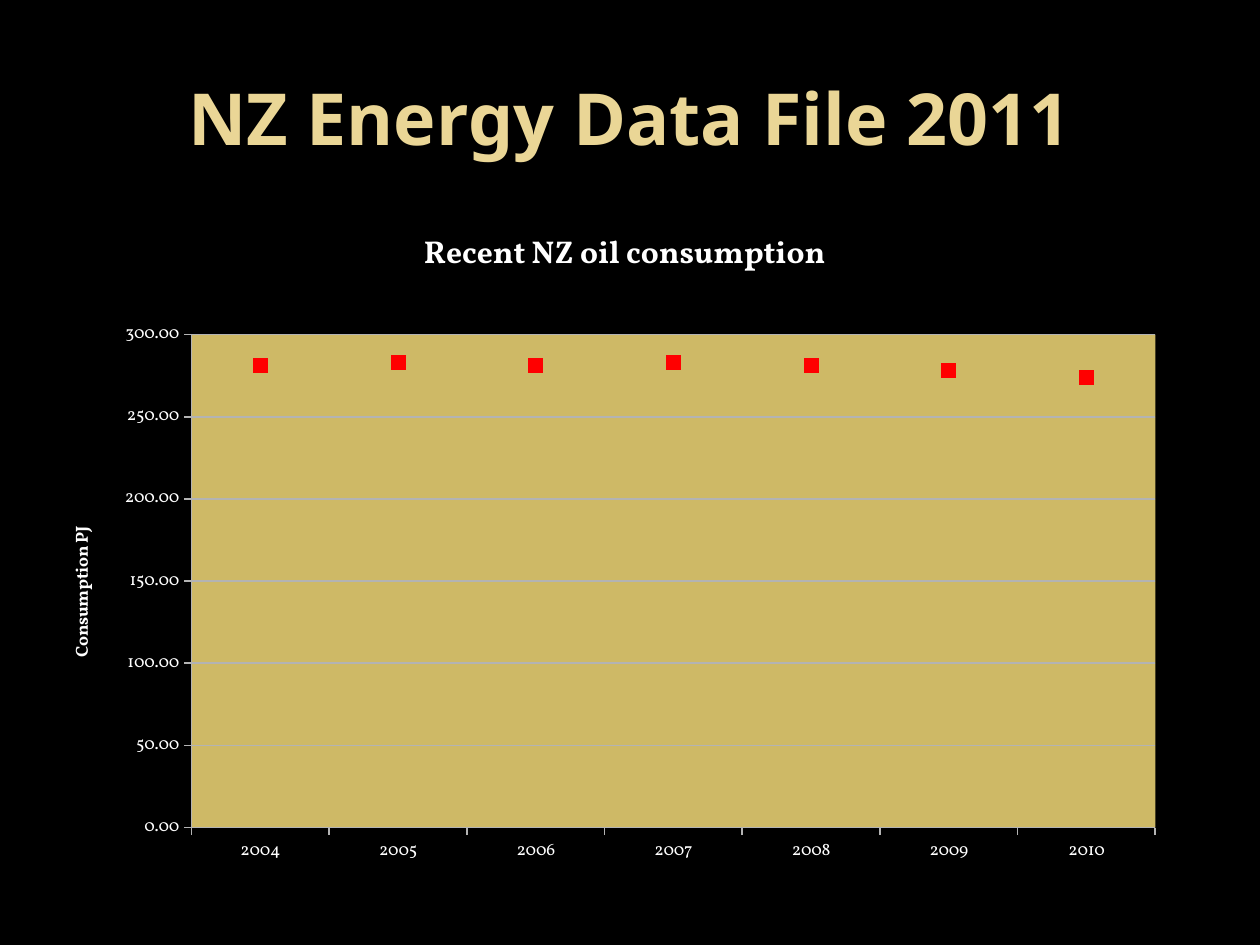
"""Build a slide with a marker chart of recent New Zealand oil consumption."""
from lxml import etree
from pptx import Presentation
from pptx import util as u
from pptx.chart.data import CategoryChartData
from pptx.dml.color import RGBColor
from pptx.enum import chart as charts, text
from pptx.oxml import parse_xml
from pptx.oxml.ns import nsdecls, qn


def paint(fill, color):
    fill.solid()
    fill.fore_color.rgb = RGBColor.from_string(color)


def place(element, before, x, y, width=None, height=None):
    for old in element.findall(qn("c:layout")):
        element.remove(old)
    layout = parse_xml(f"<c:layout {nsdecls('c')}><c:manualLayout/></c:layout>")
    settings = [("xMode", "edge"), ("yMode", "edge"), ("x", x), ("y", y)]
    if width:
        settings = [("layoutTarget", "inner"), *settings, ("w", width), ("h", height)]
    for name, value in settings:
        etree.SubElement(layout[0], qn(f"c:{name}")).set("val", str(value))
    element.find(qn(before)).addprevious(layout)


presentation = Presentation()
presentation.slide_width = u.Inches(10)
presentation.slide_height = u.Inches(7.5)
slide = presentation.slides.add_slide(presentation.slide_layouts[6])
paint(slide.background.fill, "000000")

title = slide.shapes.add_textbox(u.Inches(0.5), u.Inches(0.3), u.Inches(9), u.Inches(1.25))
title.text_frame.word_wrap = True
title.text_frame.vertical_anchor = text.MSO_ANCHOR.MIDDLE
paragraph = title.text_frame.paragraphs[0]
paragraph.text = "NZ Energy Data File 2011"
paragraph.alignment = text.PP_ALIGN.CENTER
paragraph.font.name = "Noto Sans"
paragraph.font.size = u.Pt(41)
paragraph.font.bold = True
paint(paragraph.font.fill, "EAD696")

data = CategoryChartData(number_format="0.00")
data.categories = [str(year) for year in range(2004, 2011)]
data.add_series("Series 1", [281, 283, 281, 283, 281, 278, 274])
chart = slide.shapes.add_chart(
    charts.XL_CHART_TYPE.LINE_MARKERS,
    u.Inches(0.35), u.Inches(1.78), u.Inches(9), u.Inches(5.15), data,
).chart
chart.has_legend = False
chart.font.name = "Vollkorn"
chart.font.size = u.Pt(10)
paint(chart.font.fill, "FFFFFF")

value_axis, category_axis = chart.value_axis, chart.category_axis
value_axis.minimum_scale = 0
value_axis.maximum_scale = 300
value_axis.major_unit = 50
value_axis.has_major_gridlines = True
value_axis.tick_labels.number_format = "0.00"
value_axis.tick_labels.number_format_is_linked = False
for axis in (value_axis, category_axis):
    axis.major_tick_mark = charts.XL_TICK_MARK.OUTSIDE
    axis.minor_tick_mark = charts.XL_TICK_MARK.NONE
for line in (value_axis.format.line, category_axis.format.line,
             value_axis.major_gridlines.format.line):
    paint(line.fill, "B3B3B3")
    line.width = u.Pt(1)

for owner, wording, size, x, y in (
    (chart, "Recent NZ oil consumption", 18, 0.33, 0),
    (value_axis, "Consumption PJ", 10, 0.02, 0.46),
):
    heading = owner.chart_title if owner is chart else owner.axis_title
    paragraph = heading.text_frame.paragraphs[0]
    paragraph.text = wording
    paragraph.font.name = "Vollkorn"
    paragraph.font.size = u.Pt(size)
    paragraph.font.bold = True
    paint(paragraph.font.fill, "FFFFFF")
    element = heading.text_frame._txBody.getparent().getparent()
    place(element, "c:overlay", x, y)
value_axis.axis_title.text_frame._txBody.bodyPr.set("rot", "-5400000")

plot = chart.plots[0]
plot.vary_by_categories = False
series = plot.series[0]
series.smooth = False
series.format.line.fill.background()
series.marker.style = charts.XL_MARKER_STYLE.SQUARE
series.marker.size = 8
paint(series.marker.format.fill, "FF0000")
paint(series.marker.format.line.fill, "FF0000")

plot_area = chart._chartSpace.chart.plotArea
place(plot_area, "c:lineChart", 0.13, 0.17, 0.85, 0.76)
plot_area.append(parse_xml(
    f"<c:spPr {nsdecls('c', 'a')}><a:solidFill>"
    '<a:srgbClr val="CEB966"/></a:solidFill></c:spPr>'
))

presentation.save("out.pptx")
